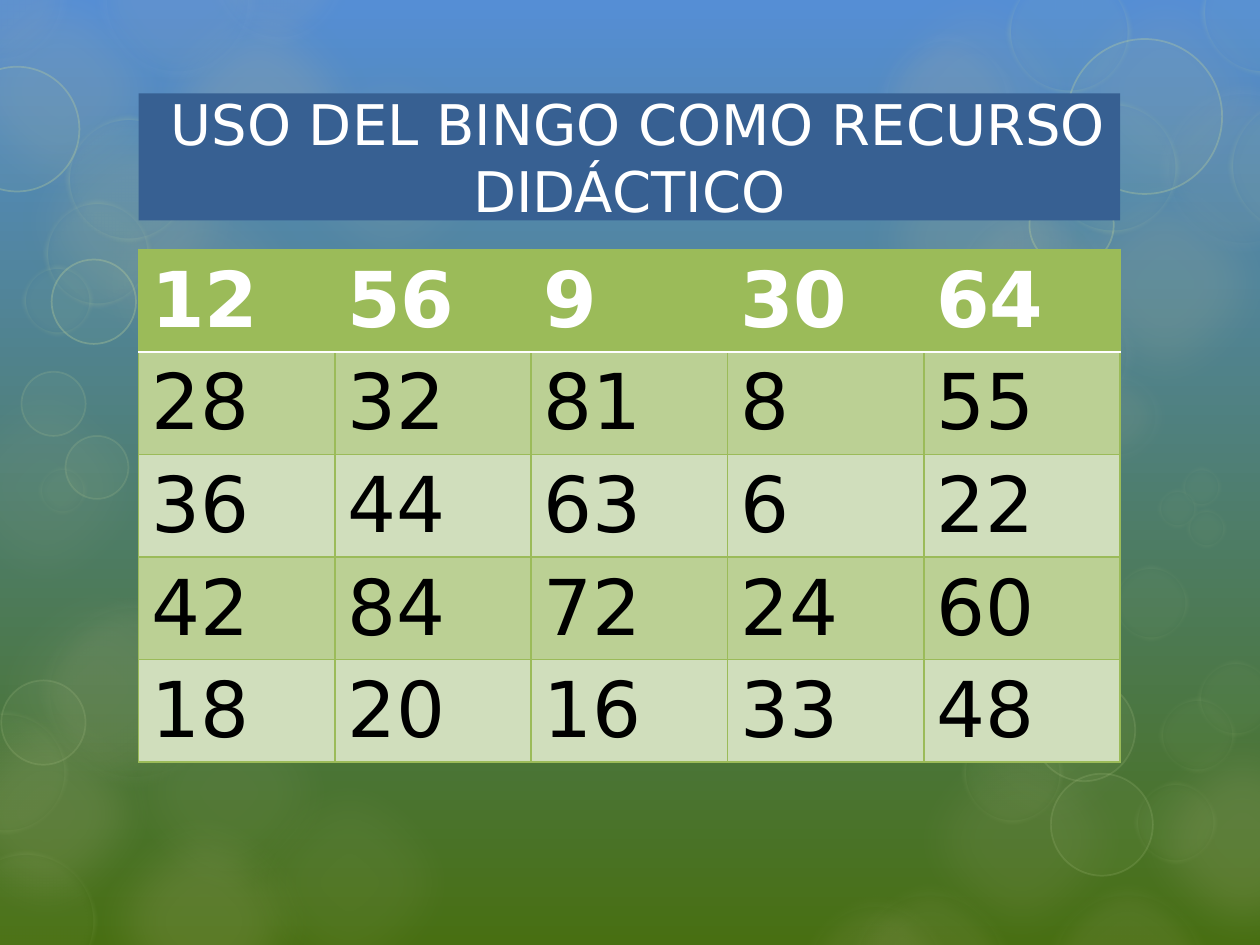
from lxml import etree
from pptx import Presentation
from pptx.dml.color import RGBColor
from pptx.enum import shapes, text
from pptx.oxml import ns
from pptx.util import Inches, Pt

# Content
TITLE = " USO DEL BINGO COMO RECURSO DIDÁCTICO"
NUMBERS = [
    (12, 56, 9, 30, 64),
    (28, 32, 81, 8, 55),
    (36, 44, 63, 6, 22),
    (42, 84, 72, 24, 60),
    (18, 20, 16, 33, 48),
]

# Colours and font
SKY = RGBColor(0x55, 0x8E, 0xD5)
GRASS = RGBColor(0x48, 0x6F, 0x12)
NAVY = RGBColor(0x37, 0x60, 0x92)
GREEN = RGBColor(0x9B, 0xBB, 0x59)
DARK_BAND = RGBColor(0xBB, 0xD0, 0x94)
LIGHT_BAND = RGBColor(0xD0, 0xDE, 0xBC)
WHITE = RGBColor(0xFF, 0xFF, 0xFF)
BLACK = RGBColor(0, 0, 0)
SAND = RGBColor(0xC4, 0xBD, 0x97)
LIME = RGBColor(0xC3, 0xD6, 0x9B)
CREAM = RGBColor(0xF5, 0xF4, 0xED)
FONT = "DejaVu Sans"

# Bubbles: left, top, diameter, opacity of the fill (glows) or the line (rings)
GLOWS = [
    (-0.26, 4.42, 2.09, 8), (0.57, 1.2, 2.09, 10), (2.05, 0.31, 2.09, 10),
    (0.57, 6.27, 2.09, 16), (-0.56, -0.33, 2.09, 14), (1.01, -0.18, 2.09, 20),
    (0, 0.72, 2.09, 15), (8.2, -0.33, 2.09, 10), (6.69, -0.29, 2.09, 10),
    (8.2, 1.2, 2.09, 15), (8.81, 5.62, 2.09, 16), (7.29, 4.77, 2.09, 5),
    (-0.68, 5.41, 2.09, 16), (0.77, 5.24, 2.09, 8), (6.69, 0.86, 2.09, 15),
    (7.06, 5.62, 2.09, 10), (1.73, 5.96, 2.09, 8), (-0.69, 2.82, 2.09, 8),
    (6.75, 2.62, 1.33, 10),
]
HALOS = [
    (9.18, 0.65, 1.37, 6), (6.94, 0.23, 1.14, 6), (7.52, 1.59, 1.33, 6),
    (7.89, 2.24, 1.14, 6), (8.47, 2.91, 0.79, 6), (0.75, -0.65, 1.31, 6),
    (1.64, -0.75, 1.14, 6), (-0.57, -0.58, 1.14, 6), (0.3, 4.73, 1.53, 4),
    (6.32, 7.1, 1.25, 4), (6.7, 7.01, 1.36, 4), (8.28, 7.01, 1.34, 4),
]
SOFT_RINGS = [
    (-0.35, 6.75, 1.12, 15), (-0.44, 5.64, 0.98, 15), (0.52, 0.92, 1, 30),
    (0.35, 1.59, 0.85, 30), (0.17, 2.1, 0.57, 30), (7.99, -0.24, 0.99, 30),
    (9.53, -0.39, 0.99, 30), (9.75, 0.77, 1.1, 30), (8.3, 0.8, 1.06, 30),
    (7.63, 5.73, 0.81, 15), (9, 6.2, 0.66, 15), (8.83, 4.48, 0.61, 15),
    (9.2, 5.53, 0.61, 15), (9.5, 5.24, 0.61, 15), (9.37, 3.7, 0.33, 15),
    (9.18, 3.87, 0.33, 15), (9.41, 4.03, 0.33, 15), (0.3, 3.7, 0.39, 15),
]
SHARP_RINGS = [
    (0.01, 5.4, 0.67, 15), (-0.36, 0.53, 0.99, 30), (0.41, 2.06, 0.67, 30),
    (8.47, 0.31, 1.23, 30), (8.17, 1.45, 0.67, 30), (8.34, 6.14, 0.81, 15),
    (8.2, 5.39, 0.81, 15), (0.17, 2.95, 0.51, 15), (0.52, 3.46, 0.5, 15),
]
BUBBLES = [
    (GLOWS, {"fill": SAND, "blur": 0.35}),
    (HALOS, {"fill": SAND, "opacity": 10, "line": CREAM, "width": 14, "blur": 0.18}),
    (SOFT_RINGS, {"fill": LIME, "opacity": 5, "line": LIME, "width": 5, "blur": 0.06}),
    (SHARP_RINGS, {"fill": LIME, "opacity": 5, "line": LIME, "width": 1}),
]

# Layout
LEFT, WIDTH = 1.1, 7.79
TITLE_TOP, TITLE_HEIGHT = 0.74, 1.01
TABLE_TOP, ROW_HEIGHT = 1.98, 0.81


def set_solid(fill, color, opacity=100):
    fill.solid()
    fill.fore_color.rgb = color
    if opacity < 100:
        srgb = fill._xPr.find(".//" + ns.qn("a:srgbClr"))
        etree.SubElement(srgb, ns.qn("a:alpha"), val=str(opacity * 1000))


def format_text(para, color, **values):
    for name, value in values.items():
        setattr(para.font, name, value)
    para.font.color.rgb = color


def add_bubble(page, left, top, size, opacity, style):
    bubble = page.shapes.add_shape(
        shapes.MSO_SHAPE.OVAL, *map(Inches, (left, top, size, size)))
    set_solid(bubble.fill, style["fill"], style.get("opacity", opacity))
    if "line" in style:
        bubble.line.width = Pt(style["width"])
        set_solid(bubble.line.fill, style["line"], opacity)
    else:
        bubble.line.fill.background()
    bubble.shadow.inherit = False
    if "blur" in style:
        effects = bubble._element.spPr.find(ns.qn("a:effectLst"))
        etree.SubElement(effects, ns.qn("a:softEdge"), rad=str(Inches(style["blur"])))


def set_border(cell, side, color, width):
    line = etree.SubElement(cell._tc.get_or_add_tcPr(), ns.qn("a:ln" + side), w=str(Pt(width)))
    fill = etree.SubElement(line, ns.qn("a:solidFill"))
    etree.SubElement(fill, ns.qn("a:srgbClr"), val=str(color))


def add_title(page):
    box = page.shapes.title
    box.left, box.top = Inches(LEFT), Inches(TITLE_TOP)
    box.width, box.height = Inches(WIDTH), Inches(TITLE_HEIGHT)
    set_solid(box.fill, NAVY)
    frame = box.text_frame
    frame.text = TITLE
    frame.word_wrap = True
    frame.auto_size = text.MSO_AUTO_SIZE.NONE
    frame.vertical_anchor = text.MSO_ANCHOR.MIDDLE
    para = frame.paragraphs[0]
    para.alignment = text.PP_ALIGN.CENTER
    format_text(para, WHITE, name=FONT, size=Pt(32))
    page.shapes._spTree.append(box._element)  # bring in front of the bubbles


def add_bingo_card(page):
    rows, columns = len(NUMBERS), len(NUMBERS[0])
    table = page.shapes.add_table(
        rows, columns, Inches(LEFT), Inches(TABLE_TOP),
        Inches(WIDTH), Inches(ROW_HEIGHT * rows)).table
    for r, numbers in enumerate(NUMBERS):
        header = r == 0
        band = GREEN if header else (LIGHT_BAND, DARK_BAND)[r % 2]
        for c, number in enumerate(numbers):
            cell = table.cell(r, c)
            borders = dict.fromkeys("LRTB", (GREEN, 1))
            if header:
                borders["B"] = (WHITE, 1.5)
            elif r == 1:
                borders["T"] = (WHITE, 1.5)
            for side, (color, width) in borders.items():
                set_border(cell, side, color, width)
            set_solid(cell.fill, band)
            cell.text = str(number)
            format_text(cell.text_frame.paragraphs[0], WHITE if header else BLACK,
                        name=FONT, size=Pt(44), bold=header)


def main():
    deck = Presentation()
    deck.slide_width, deck.slide_height = Inches(10), Inches(7.5)
    page = deck.slides.add_slide(deck.slide_layouts[5])

    # Sky-to-grass background
    backdrop = page.background.fill
    backdrop.gradient()
    backdrop.gradient_angle = 270
    for stop, color in zip(backdrop.gradient_stops, (SKY, GRASS)):
        stop.color.rgb = color

    # Bubbles, then title and bingo card in front
    for group, style in BUBBLES:
        for bubble in group:
            add_bubble(page, *bubble, style)
    add_title(page)
    add_bingo_card(page)
    deck.save("out.pptx")


if __name__ == "__main__":
    main()
